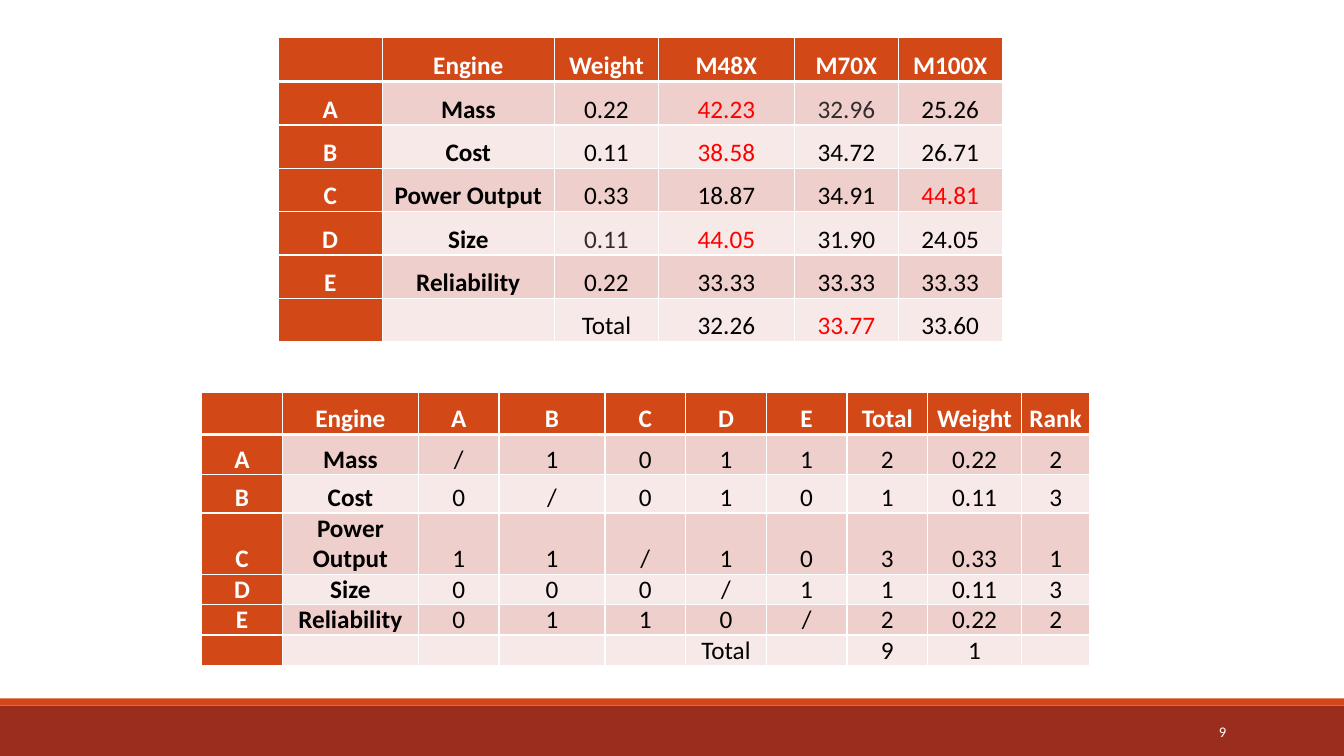
import lxml.etree
import pptx
import pptx.dml.color
import pptx.enum.shapes
import pptx.enum.text
import pptx.oxml.ns
import pptx.util

Inches = pptx.util.Inches

THEME = {
    "font": "Calibri",
    "table_size": 18,
    "number_size": 10.5,
    "accent": "D34817",
    "footer": "9B2D1F",
    "bands": ("EFCFCC", "F7E9E8"),
    "light": "FFFFFF",
    "dark": "000000",
    "soft": "332C2C",
    "best": "FF0000",
    "thin_line": 1,
    "header_line": 3,
}

SCORES = {
    "position": (2.76, 0.37),
    "columns": (1.03, 1.71, 1.03, 1.35, 1.03, 1.03),
    "rows": (0.44,) + (0.43,) * 6,
    "cells": [
        ("", "Engine", "Weight", "M48X", "M70X", "M100X"),
        ("A", "Mass", "0.22", "42.23", "32.96", "25.26"),
        ("B", "Cost", "0.11", "38.58", "34.72", "26.71"),
        ("C", "Power Output", "0.33", "18.87", "34.91", "44.81"),
        ("D", "Size", "0.11", "44.05", "31.90", "24.05"),
        ("E", "Reliability", "0.22", "33.33", "33.33", "33.33"),
        ("", "", "Total", "32.26", "33.77", "33.60"),
    ],
    "colours": {
        (1, 3): "best", (2, 3): "best", (3, 5): "best", (4, 3): "best",
        (6, 4): "best", (1, 4): "soft", (4, 2): "soft",
    },
}

WEIGHTS = {
    "position": (2, 3.89),
    "columns": (0.8, 1.35, 0.8, 1.05, 0.8, 0.8, 0.8, 0.8, 0.93, 0.68),
    "rows": (0.42, 0.4, 0.38, 0.61, 0.3, 0.3, 0.3),
    "cells": [
        ("", "Engine", "A", "B", "C", "D", "E", "Total", "Weight", "Rank"),
        ("A", "Mass", "/", "1", "0", "1", "1", "2", "0.22", "2"),
        ("B", "Cost", "0", "/", "0", "1", "0", "1", "0.11", "3"),
        ("C", "Power Output", "1", "1", "/", "1", "0", "3", "0.33", "1"),
        ("D", "Size", "0", "0", "0", "/", "1", "1", "0.11", "3"),
        ("E", "Reliability", "0", "1", "1", "0", "/", "2", "0.22", "2"),
        ("", "", "", "", "", "Total", "", "9", "1", ""),
    ],
    "colours": {},
}

FOOTER_BARS = [(7, 0.5, "footer"), (6.93, 0.07, "accent")]
SLIDE_SIZE = (13.33, 7.5)
SLIDE_NUMBER = "9"


def rgb(value):
    return pptx.dml.color.RGBColor.from_string(value)


def set_font(paragraph, size, colour, bold=False):
    font = paragraph.font
    font.name = THEME["font"]
    font.size = pptx.util.Pt(size)
    font.bold = bold
    font.color.rgb = rgb(colour)


def add_borders(cell, row):
    """Thin white lines all round, with a thicker one under the header."""
    properties = cell._tc.get_or_add_tcPr()
    thick_side = {0: "lnB", 1: "lnT"}.get(row)
    for side in ("lnL", "lnR", "lnT", "lnB"):
        width = THEME["header_line" if side == thick_side else "thin_line"]
        line = lxml.etree.SubElement(properties, pptx.oxml.ns.qn("a:" + side),
                                     w=str(pptx.util.Pt(width)))
        fill = lxml.etree.SubElement(line, pptx.oxml.ns.qn("a:solidFill"))
        lxml.etree.SubElement(fill, pptx.oxml.ns.qn("a:srgbClr"), val=THEME["light"])


def format_cell(cell, row, column, text, colour):
    heading = row == 0 or column == 0
    add_borders(cell, row)
    cell.fill.solid()
    cell.fill.fore_color.rgb = rgb(
        THEME["accent"] if heading else THEME["bands"][(row - 1) % 2])
    cell.margin_left = cell.margin_right = Inches(0.07)
    cell.margin_top = cell.margin_bottom = 0
    cell.vertical_anchor = pptx.enum.text.MSO_ANCHOR.BOTTOM
    cell.text = text
    paragraph = cell.text_frame.paragraphs[0]
    paragraph.alignment = pptx.enum.text.PP_ALIGN.CENTER
    set_font(paragraph, THEME["table_size"],
             THEME["light" if heading else colour], heading or column == 1)


def add_engine_table(slide, content):
    widths, heights = content["columns"], content["rows"]
    left, top = content["position"]
    table = slide.shapes.add_table(
        len(heights), len(widths), Inches(left), Inches(top),
        Inches(sum(widths)), Inches(sum(heights))).table
    for column, width in zip(table.columns, widths):
        column.width = Inches(width)
    for row, height in zip(table.rows, heights):
        row.height = Inches(height)
    for row, texts in enumerate(content["cells"]):
        for column, text in enumerate(texts):
            colour = content["colours"].get((row, column), "dark")
            format_cell(table.cell(row, column), row, column, text, colour)


def add_footer(slide):
    for top, height, colour in FOOTER_BARS:
        bar = slide.shapes.add_shape(
            pptx.enum.shapes.MSO_SHAPE.RECTANGLE, 0, Inches(top),
            Inches(SLIDE_SIZE[0]), Inches(height))
        bar.shadow.inherit = False
        bar.fill.solid()
        bar.fill.fore_color.rgb = rgb(THEME[colour])
        bar.line.fill.background()
    number_box = slide.shapes.add_textbox(
        Inches(10.83), Inches(7.06), Inches(1.43), Inches(0.4))
    frame = number_box.text_frame
    frame.word_wrap = True
    frame.vertical_anchor = pptx.enum.text.MSO_ANCHOR.MIDDLE
    paragraph = frame.paragraphs[0]
    paragraph.text = SLIDE_NUMBER
    paragraph.alignment = pptx.enum.text.PP_ALIGN.RIGHT
    set_font(paragraph, THEME["number_size"], THEME["light"])


def main():
    presentation = pptx.Presentation()
    presentation.slide_width, presentation.slide_height = map(Inches, SLIDE_SIZE)
    slide = presentation.slides.add_slide(presentation.slide_layouts[6])
    add_footer(slide)
    for content in (SCORES, WEIGHTS):
        add_engine_table(slide, content)
    presentation.save("out.pptx")


if __name__ == "__main__":
    main()
